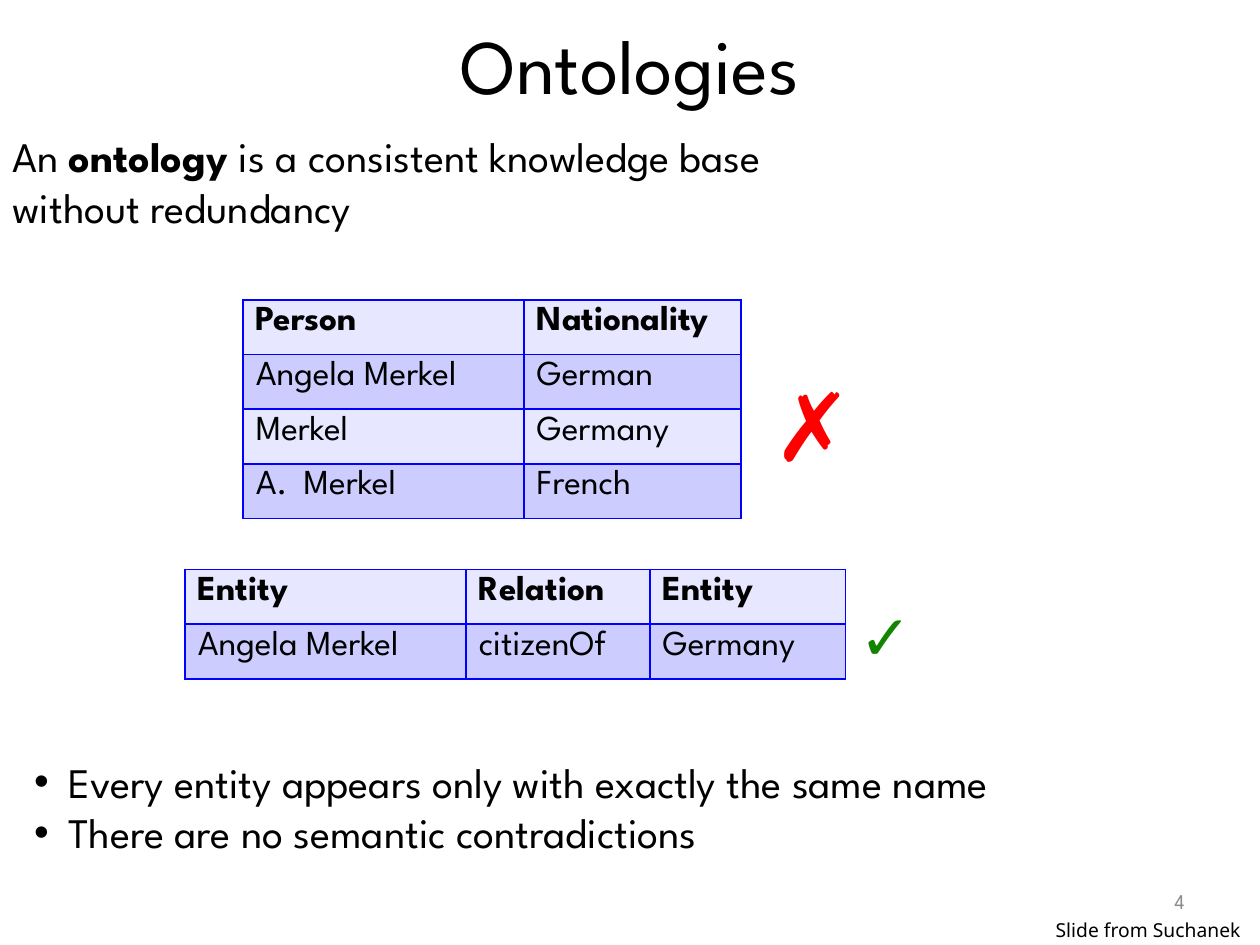
from lxml.etree import SubElement
from pptx import Presentation
from pptx.dml.color import RGBColor
from pptx.enum.text import MSO_ANCHOR, MSO_AUTO_SIZE, PP_ALIGN
from pptx.oxml.ns import qn
from pptx.util import Inches, Pt


def rgb(value):
    return RGBColor.from_string(value)


class Deck:
    FONT = "League Spartan"
    BLACK, GREY, BORDER = "000000", "8C8C8C", "0001FF"
    RED, GREEN = "FF0000", "128400"
    BANDS = ("E7E7FF", "CCCCFF")
    ROW_HEIGHT = 0.43

    def __init__(self, prs):
        self.s = prs.slides.add_slide(prs.slide_layouts[1])

    def place(self, sp, at):
        sp.left, sp.top, sp.width, sp.height = map(Inches, at)

    def style(self, p, size, color=BLACK, font=FONT, align=PP_ALIGN.LEFT, bold=None):
        p.alignment = align
        p.space_before = Pt(0)
        p.font.size, p.font.name, p.font.bold = Pt(size), font, bold
        p.font.color.rgb = rgb(color)

    def bullet(self, p, indent, kind, **attrs):
        pPr = p._p.get_or_add_pPr()
        pPr.set("marL", str(Inches(indent)))
        pPr.set("indent", str(-Inches(indent)))
        mark = pPr.makeelement(qn(kind), attrs)
        pPr.insert_element_before(mark, "a:tabLst", "a:defRPr", "a:extLst")

    def title(self, text, at):
        sp = self.s.shapes.title
        self.place(sp, at)
        tf = sp.text_frame
        tf.text, tf.auto_size = text, MSO_AUTO_SIZE.NONE
        tf.vertical_anchor = MSO_ANCHOR.MIDDLE
        self.style(tf.paragraphs[0], 44, align=PP_ALIGN.CENTER)

    def bullets(self, lines, at):
        sp = self.s.placeholders[1]
        self.place(sp, at)
        tf = sp.text_frame
        tf.text, tf.auto_size = "\n".join(lines), MSO_AUTO_SIZE.NONE
        for p in tf.paragraphs:
            self.style(p, 24)
            self.bullet(p, 0.27, "a:buChar", char="•")

    def text(self, lines, at, size, wrap=True, anchor=MSO_ANCHOR.TOP, **style):
        """Each line is a list of (text, bold) runs."""
        tf = self.s.shapes.add_textbox(*map(Inches, at)).text_frame
        tf.word_wrap, tf.vertical_anchor = wrap, anchor
        for i, line in enumerate(lines):
            p = tf.add_paragraph() if i else tf.paragraphs[0]
            for text, bold in line:
                r = p.add_run()
                r.text, r.font.bold = text, bold
            self.style(p, size, **style)

    def border(self, cell):
        tcPr = cell._tc.get_or_add_tcPr()
        for side in ("a:lnL", "a:lnR", "a:lnT", "a:lnB"):
            ln = SubElement(tcPr, qn(side), w=str(Pt(1)))
            fill = SubElement(ln, qn("a:solidFill"))
            SubElement(fill, qn("a:srgbClr"), val=self.BORDER)

    def table(self, rows, left, top, widths):
        size = (sum(widths), self.ROW_HEIGHT * len(rows))
        frame = self.s.shapes.add_table(len(rows), len(widths),
                                        *map(Inches, (left, top, *size)))
        table = frame.table
        table.horz_banding = False
        for column, width in zip(table.columns, widths):
            column.width = Inches(width)
        for i, row in enumerate(rows):
            table.rows[i].height = Inches(self.ROW_HEIGHT)
            for j, text in enumerate(row):
                cell = table.cell(i, j)
                self.border(cell)
                cell.fill.solid()
                cell.fill.fore_color.rgb = rgb(self.BANDS[i % 2])
                cell.text = text
                self.style(cell.text_frame.paragraphs[0], 20, bold=i == 0)
        return table


def main():
    prs = Presentation()
    prs.slide_width, prs.slide_height = Inches(10), Inches(7.5)
    deck = Deck(prs)

    # Title and definition
    deck.title("Ontologies", (0.5, 0, 9, 1.01))
    deck.text([[("An ", False), ("ontology ", True),
                ("is a consistent knowledge base", False)],
               [("without redundancy", False)]], (0, 0.99, 10, 0.91), 24)

    # Consistent table with its check mark
    deck.table([("Entity", "Relation", "Entity"),
                ("Angela Merkel", "citizenOf", "Germany")],
               1.47, 4.52, (2.23, 1.46, 1.55))
    deck.text([[("✓", None)]], (6.72, 4.69, 1.18, 0.71), 36, color=deck.GREEN)

    # Redundant table with its cross
    people = deck.table([("Person", "Nationality"), ("Angela Merkel", "German"),
                         ("Merkel", "Germany"), ("Merkel", "French")],
                        1.93, 2.38, (2.23, 1.72))
    initial = people.cell(3, 0).text_frame.paragraphs[0]
    deck.bullet(initial, 0.38, "a:buAutoNum", type="alphaUcPeriod")
    deck.text([[("✗", None)]], (6.04, 2.86, 0.68, 1.01), 54, wrap=False, color=deck.RED)

    # Rules
    deck.bullets(["Every entity appears only with exactly the same name",
                  "There are no semantic contradictions"], (0.17, 5.95, 9.33, 0.91))

    # Page number and credit
    deck.text([[("4", None)]], (7.17, 6.95, 2.33, 0.4), 12, anchor=MSO_ANCHOR.MIDDLE,
              color=deck.GREY, align=PP_ALIGN.RIGHT)
    deck.text([[("Slide from Suchanek", None)]], (8.28, 7.24, 1.72, 0.29), 11,
              wrap=False, font="Noto Sans")

    prs.save("out.pptx")


if __name__ == "__main__":
    main()
